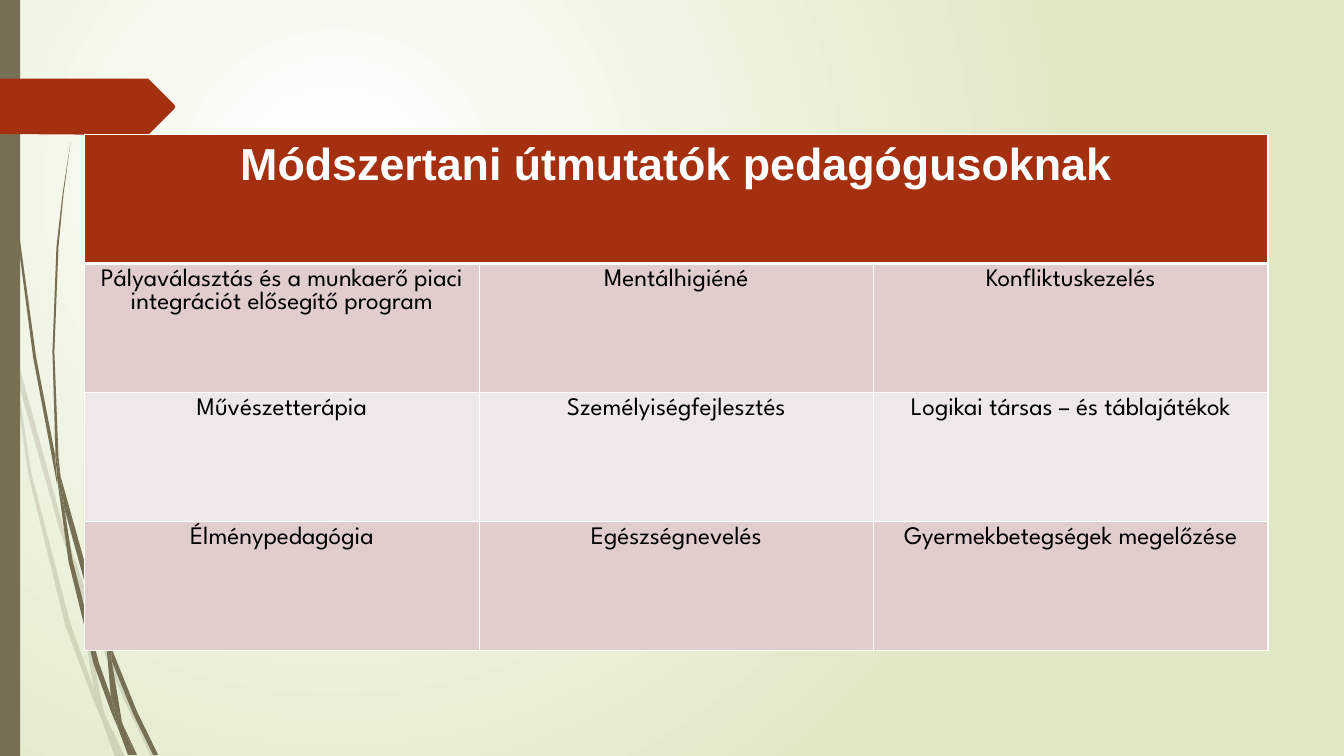
from typing import NamedTuple

from lxml import etree
from pptx import Presentation
from pptx import util as u
from pptx.dml.color import RGBColor
from pptx.enum import shapes, text
from pptx.oxml import ns

WHITE = RGBColor(0xFF, 0xFF, 0xFF)
BLACK = RGBColor(0x00, 0x00, 0x00)
PALE_GREEN = RGBColor(0xDF, 0xE8, 0xC4)
OLIVE = RGBColor(0x76, 0x6F, 0x54)
RUST = RGBColor(0xA5, 0x30, 0x10)
ROSE = RGBColor(0xE1, 0xCD, 0xCC)
LIGHT_ROSE = RGBColor(0xF0, 0xE8, 0xE7)

GRID = 0.72  # points per unit of the outline grid


class Outline(NamedTuple):
    points: list[tuple[int, int]]
    color: RGBColor
    opacity: int = 100


class CellStyle(NamedTuple):
    font: str
    size: int
    bold: bool
    color: RGBColor


FAINT_BLADES = [
    [(11, 350), (9, 322), (0, 282), (0, 299), (10, 344)],
    [(58, 522), (84, 599), (85, 586), (62, 520), (14, 345), (17, 376)],
    [(92, 607), (88, 596), (88, 610), (123, 694), (150, 751), (155, 751), (127, 692)],
    [(119, 751), (124, 751), (105, 711)],
    [(93, 683), (70, 619), (31, 469), (17, 376), (11, 350), (28, 470), (65, 621),
     (92, 693), (101, 714), (99, 707)],
    [(84, 599), (87, 646), (93, 683), (96, 692), (105, 711), (103, 706), (91, 646),
     (88, 610), (88, 608)],
    [(88, 584), (110, 462), (160, 349), (229, 245), (268, 198), (290, 175), (312, 154),
     (312, 153), (289, 175), (268, 197), (228, 244), (158, 348), (107, 461), (85, 584),
     (85, 586), (88, 596)],
    [(101, 714), (114, 751), (119, 751)],
    [(88, 608), (88, 596), (85, 586), (84, 599)],
    [(96, 692), (93, 683), (99, 707), (101, 714), (119, 751), (105, 711)],
]
SOLID_BLADES = [
    [(7, 110), (17, 233), (33, 355), (56, 477), (57, 481), (55, 457), (55, 453),
     (36, 355), (19, 232), (8, 109), (5, 48), (4, 0), (3, 0), (4, 48)],
    [(88, 592), (106, 645), (106, 631), (93, 590), (60, 472), (64, 505)],
    [(113, 649), (110, 641), (111, 656), (132, 708), (152, 749), (157, 749), (136, 706)],
    [(110, 691), (98, 657), (72, 556), (64, 505), (57, 477), (68, 557), (93, 659),
     (111, 708), (117, 722), (116, 717)],
    [(60, 472), (58, 453), (54, 349), (58, 245), (63, 193), (70, 141), (62, 193),
     (56, 245), (52, 349), (55, 449)],
    [(133, 749), (136, 749), (122, 719)],
    [(57, 477), (64, 505), (60, 472), (55, 449), (55, 453)],
    [(111, 633), (125, 552), (158, 476), (205, 406), (231, 374), (245, 359), (261, 344),
     (260, 344), (245, 358), (231, 373), (204, 405), (156, 474), (122, 551), (106, 631),
     (110, 641)],
    [(117, 722), (127, 749), (131, 749)],
    [(106, 645), (110, 691), (116, 706), (122, 719), (121, 716), (111, 656), (109, 651)],
    [(106, 645), (109, 651), (111, 656), (110, 641), (106, 631)],
    [(116, 706), (110, 691), (116, 717), (117, 722), (130, 749), (133, 749), (122, 719)],
]
ARROW = [(0, 78), (147, 78), (148, 79), (173, 104), (174, 106), (173, 108), (148, 133),
         (146, 134), (0, 133)]

TITLE = "Módszertani útmutatók pedagógusoknak"
TOPICS = [
    ["Pályaválasztás és a munkaerő piaci integrációt elősegítő program",
     "Mentálhigiéné", "Konfliktuskezelés"],
    ["Művészetterápia", "Személyiségfejlesztés", "Logikai társas – és táblajátékok"],
    ["Élménypedagógia", "Egészségnevelés", "Gyermekbetegségek megelőzése"],
]
TITLE_STYLE = CellStyle("Arial", 32, True, WHITE)
TOPIC_STYLE = CellStyle("League Spartan", 18, False, BLACK)
COLUMN_WIDTH, ROW_HEIGHT = 281.75, 92.2


def paint_background(slide) -> None:
    """Radial gradient, white near the upper left."""
    fill = slide.background.fill
    fill.gradient()
    for stop, color in zip(fill.gradient_stops, (WHITE, PALE_GREEN)):
        stop.color.rgb = color
    gradient = slide.element.find(".//" + ns.qn("a:gradFill"))
    gradient.remove(gradient.find(ns.qn("a:lin")))
    circle = etree.SubElement(gradient, ns.qn("a:path"), path="circle")
    etree.SubElement(circle, ns.qn("a:fillToRect"),
                     l="50000", t="50000", r="100000", b="100000")


def paint_shape(shape, color: RGBColor, opacity: int = 100) -> None:
    shape.shadow.inherit = False
    shape.fill.solid()
    shape.fill.fore_color.rgb = color
    shape.line.fill.background()
    if opacity < 100:
        rgb = shape.element.spPr.find(".//" + ns.qn("a:srgbClr"))
        etree.SubElement(rgb, ns.qn("a:alpha"), val=str(opacity * 1000))


def draw_outline(slide, outline: Outline) -> None:
    start, *rest = [(u.Pt(x * GRID), u.Pt(y * GRID)) for x, y in outline.points]
    builder = slide.shapes.build_freeform(*start)
    builder.add_line_segments(rest, close=True)
    paint_shape(builder.convert_to_shape(), outline.color, outline.opacity)


def set_borders(cell, top: int, bottom: int) -> None:
    """White borders, one point wide at the sides."""
    properties = cell._tc.get_or_add_tcPr()
    widths = {"lnL": 1, "lnR": 1, "lnT": top, "lnB": bottom}
    for index, (side, width) in enumerate(widths.items()):
        border = etree.Element(ns.qn(f"a:{side}"), w=str(u.Pt(width)))
        fill = etree.SubElement(border, ns.qn("a:solidFill"))
        etree.SubElement(fill, ns.qn("a:srgbClr"), val=str(WHITE))
        properties.insert(index, border)


def fill_cell(cell, wording: str, style: CellStyle, background: RGBColor) -> None:
    cell.text_frame.text = wording
    paragraph = cell.text_frame.paragraphs[0]
    paragraph.alignment = text.PP_ALIGN.CENTER
    for run in paragraph.runs:
        run.font.name = style.font
        run.font.size = u.Pt(style.size)
        run.font.bold = style.bold
        run.font.color.rgb = style.color
    cell.fill.solid()
    cell.fill.fore_color.rgb = background


def add_topic_table(slide) -> None:
    columns, rows = len(TOPICS[0]), len(TOPICS) + 1
    table = slide.shapes.add_table(
        rows, columns, u.Pt(60.5), u.Pt(96), u.Pt(COLUMN_WIDTH * columns),
        u.Pt(ROW_HEIGHT * rows)).table
    for column in table.columns:
        column.width = u.Pt(COLUMN_WIDTH)
    for row in table.rows:
        row.height = u.Pt(ROW_HEIGHT)

    table.cell(0, 0).merge(table.cell(0, columns - 1))
    fill_cell(table.cell(0, 0), TITLE, TITLE_STYLE, RUST)
    for row, topics in enumerate(TOPICS, start=1):
        band = ROSE if row % 2 else LIGHT_ROSE
        for column, topic in enumerate(topics):
            fill_cell(table.cell(row, column), topic, TOPIC_STYLE, band)
    for row in range(rows):
        for column in range(columns):
            set_borders(table.cell(row, column), top=3 if row == 1 else 1,
                        bottom=3 if row == 0 else 1)


def main() -> None:
    deck = Presentation()
    deck.slide_width, deck.slide_height = u.Pt(960), u.Pt(540)
    slide = deck.slides.add_slide(deck.slide_layouts[6])
    paint_background(slide)
    for points in FAINT_BLADES:
        draw_outline(slide, Outline(points, OLIVE, opacity=20))
    for points in SOLID_BLADES:
        draw_outline(slide, Outline(points, OLIVE))
    side_bar = slide.shapes.add_shape(
        shapes.MSO_SHAPE.RECTANGLE, u.Pt(0), u.Pt(0), u.Pt(14.4), u.Pt(540))
    paint_shape(side_bar, OLIVE)
    draw_outline(slide, Outline(ARROW, RUST))
    add_topic_table(slide)
    deck.save("out.pptx")


if __name__ == "__main__":
    main()
